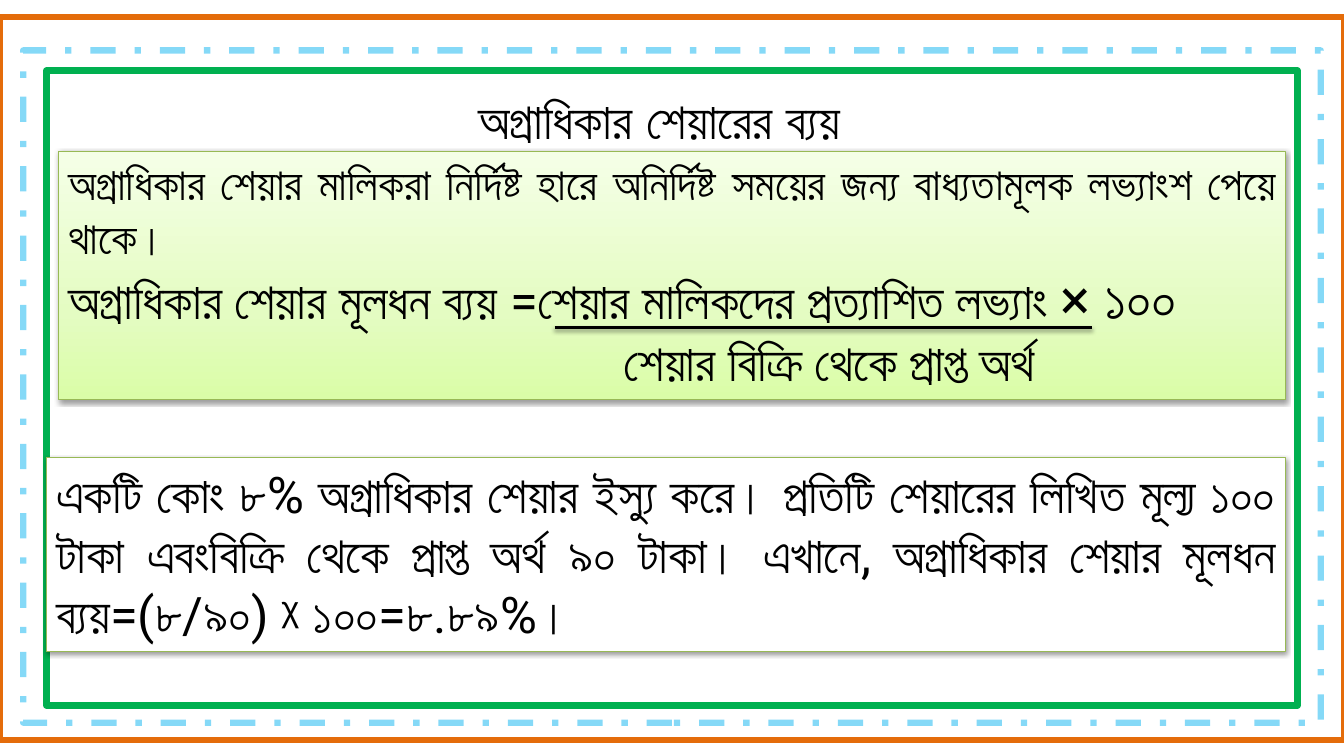
"""Build the slide on the cost of preference share capital."""
from dataclasses import dataclass

from lxml.etree import SubElement
from pptx import Presentation
from pptx.dml.color import RGBColor
from pptx.enum.dml import MSO_LINE_DASH_STYLE as Dash
from pptx.enum.shapes import MSO_CONNECTOR as Connector, MSO_SHAPE as Preset
from pptx.enum.text import MSO_ANCHOR as Anchor, MSO_AUTO_SIZE as AutoSize, PP_ALIGN as Align
from pptx.oxml.ns import qn
from pptx.util import Inches, Pt

COLORS = {
    "sky": "00B0F0", "green": "00B050", "orange": "E46C0A", "text": "000000",
    "edge": "98B955", "white": "FFFFFF",
    "lime": "DAFDA7", "pale_lime": "E4FCC2", "mist": "F5FFE7",
}
LIME_STOPS = ((0, "lime"), (35, "pale_lime"), (100, "mist"))
YA_WITH_NUKTA = chr(0x09AF) + chr(0x09BC)
SINGLE_YYA = chr(0x09DF)


@dataclass(frozen=True)
class Border:
    box: tuple[float, float, float, float]
    color: str
    dash: Dash | None = None
    opacity: int = 100


@dataclass(frozen=True)
class Phrase:
    text: str
    size: int = 36
    font: str = "Roboto"
    bold: bool = False


@dataclass(frozen=True)
class Line:
    phrases: tuple[Phrase, ...]
    indent: float = 0


@dataclass(frozen=True)
class Panel:
    box: tuple[float, float, float, float]
    lines: tuple[Line, ...]
    gradient: tuple[tuple[int, str], ...] = ()


BORDERS = (
    Border((0.23, 0.5, 12.87, 6.67), "sky", Dash.DASH_DOT, 48),
    Border((0.46, 0.7, 12.41, 6.3), "green"),
    Border((0, 0.17, 13.33, 7.17), "orange"),
)
TITLE = Line((Phrase("অগ্রাধিকার শেয়ারের ব্যয়", bold=True),))
PANELS = (
    Panel((0.58, 1.5, 12.17, 2.46), (
        Line((Phrase("অগ্রাধিকার শেয়ার মালিকরা নির্দিষ্ট হারে অনির্দিষ্ট সময়ের জন্য "
                     "বাধ্যতামূলক লভ্যাংশ পেয়ে থাকে।", 32),)),
        Line((Phrase("অগ্রাধিকার শেয়ার মূলধন ব্যয় =শেয়ার মালিকদের প্রত্যাশিত লভ্যাং "),
              Phrase("× ১০০", 40))),
        Line((Phrase("শেয়ার বিক্রি থেকে প্রাপ্ত অর্থ"),), indent=5.51),
    ), LIME_STOPS),
    Panel((0.46, 4.54, 12.29, 1.92), (
        Line((Phrase("একটি কোং ৮% অগ্রাধিকার শেয়ার ইস্যু করে। প্রতিটি শেয়ারের লিখিত "
                     "মূল্য ১০০ টাকা এবংবিক্রি থেকে প্রাপ্ত অর্থ ৯০ টাকা। এখানে, "
                     "অগ্রাধিকার শেয়ার মূলধন ব্যয়=(৮/৯০) "),
              Phrase("ᵡ ", font="Arial"),
              Phrase("১০০=৮.৮৯%।"))),
    )),
)


def rgb(name: str) -> RGBColor:
    return RGBColor.from_string(COLORS[name])


def set_line(shape, color: str, width: float) -> None:
    shape.line.color.rgb = rgb(color)
    shape.line.width = Pt(width)


def set_alpha(color_element, percent: int) -> None:
    SubElement(color_element, qn("a:alpha"), val=str(percent * 1000))


def cast_shadow(shape) -> None:
    effects = SubElement(shape._element.spPr, qn("a:effectLst"))
    shadow = SubElement(effects, qn("a:outerShdw"), blurRad=str(Pt(3.1)),
                        dist=str(Pt(1.6)), dir="5400000", rotWithShape="0")
    set_alpha(SubElement(shadow, qn("a:srgbClr"), val=COLORS["text"]), 38)


def fill_gradient(shape, stops: tuple[tuple[int, str], ...]) -> None:
    shape.fill.gradient()
    shape.fill.gradient_angle = 90
    stop_list = shape._element.spPr.find(f".//{qn('a:gsLst')}")
    stop_list.clear()
    for position, color in stops:
        stop = SubElement(stop_list, qn("a:gs"), pos=str(position * 1000))
        SubElement(stop, qn("a:srgbClr"), val=COLORS[color])


def add_phrase(paragraph, text: str, *, size: int, font: str, bold: bool) -> None:
    run = paragraph.add_run()
    run.text = text.replace(YA_WITH_NUKTA, SINGLE_YYA)
    run.font.size = Pt(size)
    run.font.name = font
    run.font.bold = bold
    run.font.color.rgb = rgb("text")


def write_lines(frame, lines: tuple[Line, ...], align: Align) -> None:
    frame.word_wrap = True
    frame.auto_size = AutoSize.SHAPE_TO_FIT_TEXT
    frame.vertical_anchor = Anchor.TOP
    for index, line in enumerate(lines):
        paragraph = frame.add_paragraph() if index else frame.paragraphs[0]
        paragraph.alignment = align
        if line.indent:
            paragraph._p.get_or_add_pPr().set("marL", str(Inches(line.indent)))
        for phrase in line.phrases:
            add_phrase(paragraph, phrase.text, size=phrase.size,
                       font=phrase.font, bold=phrase.bold)


def add_border(slide, border: Border) -> None:
    frame = slide.shapes.add_shape(Preset.RECTANGLE, *map(Inches, border.box))
    frame.shadow.inherit = False
    frame.fill.background()
    set_line(frame, border.color, 4.5)
    if border.dash:
        frame.line.dash_style = border.dash
    if border.opacity < 100:
        set_alpha(frame._element.spPr.find(f"{qn('a:ln')}//{qn('a:srgbClr')}"), border.opacity)


def add_panel(slide, panel: Panel) -> None:
    card = slide.shapes.add_shape(Preset.RECTANGLE, *map(Inches, panel.box))
    if panel.gradient:
        fill_gradient(card, panel.gradient)
    else:
        card.fill.solid()
        card.fill.fore_color.rgb = rgb("white")
    set_line(card, "edge", 0.75)
    cast_shadow(card)
    write_lines(card.text_frame, panel.lines, Align.JUSTIFY)


def main() -> None:
    deck = Presentation()
    deck.slide_width, deck.slide_height = Inches(13.33), Inches(7.5)
    slide = deck.slides.add_slide(deck.slide_layouts[6])
    for border in BORDERS:
        add_border(slide, border)
    title = slide.shapes.add_textbox(*map(Inches, (4.5, 0.83, 4.08, 0.71)))
    write_lines(title.text_frame, (TITLE,), Align.CENTER)
    for panel in PANELS:
        add_panel(slide, panel)
    fraction_bar = slide.shapes.add_connector(
        Connector.STRAIGHT, *map(Inches, (5.5, 3.25, 10.83, 3.25)))
    set_line(fraction_bar, "text", 2)
    cast_shadow(fraction_bar)
    deck.save("out.pptx")


if __name__ == "__main__":
    main()
